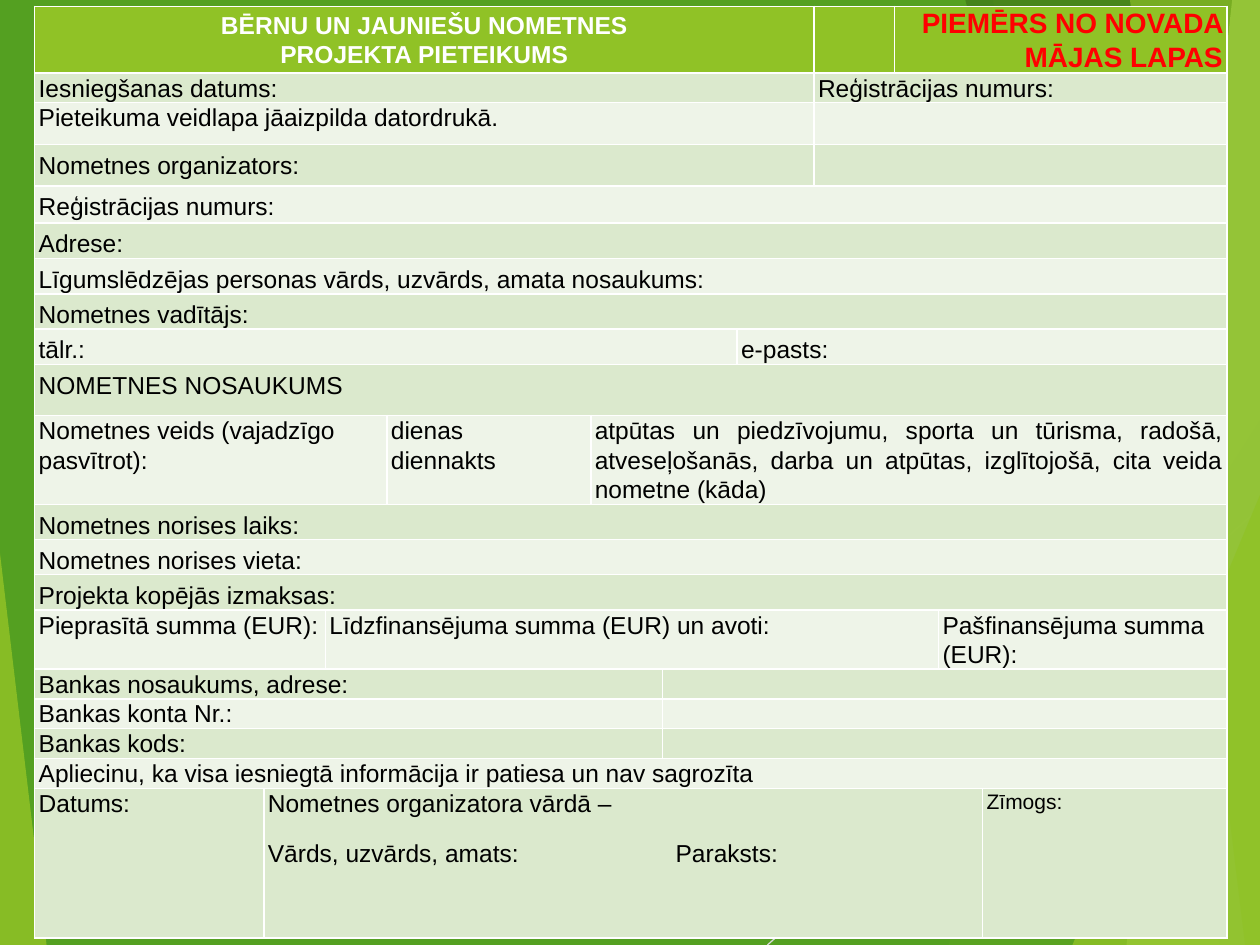
"""Build the camp project application form slide."""
from dataclasses import dataclass

from lxml import etree
from pptx import Presentation
from pptx import util as u
from pptx.dml.color import RGBColor
from pptx.enum import shapes, text
from pptx.oxml.ns import qn

GREEN = RGBColor(0x54, 0xA0, 0x21)
LIME = RGBColor(0x90, 0xC2, 0x26)
DARK_GREEN = RGBColor(0x3F, 0x78, 0x19)
PALE_LIME = RGBColor(0xC0, 0xE4, 0x74)
GREY = RGBColor(0xD9, 0xD9, 0xD9)
BAND_DARK = RGBColor(0xDB, 0xE9, 0xCD)
BAND_LIGHT = RGBColor(0xEE, 0xF4, 0xE8)
WHITE = RGBColor(0xFF, 0xFF, 0xFF)
BLACK = RGBColor(0, 0, 0)
RED = RGBColor(0xFF, 0, 0)

WIDTH, HEIGHT = 25.4, 19.05
FONT = "Arial"
COLUMNS = [4.62, 1.24, 1.24, 4.11, 1.45, 1.5, 1.55, 1.62, 0.89, 0.89, 4.92]
ROWS = [1.34, 0.58, 0.85, 0.83, 0.75, 0.72, 0.71, 0.71, 0.71, 1.03, 1.79,
        0.71, 0.71, 0.71, 1.19, 0.6, 0.59, 0.6, 0.6, 3.02]
TAB_STOP = 8.22
FIXED = u.Pt(20)
LEFT, RIGHT = text.PP_ALIGN.LEFT, text.PP_ALIGN.RIGHT
CENTER, JUSTIFY = text.PP_ALIGN.CENTER, text.PP_ALIGN.JUSTIFY


@dataclass
class Field:
    """One form field: its column span, lines and text format."""
    span: int
    lines: tuple = ()
    spacing: object = 1.07
    align: object = LEFT
    size: int = 14
    color: RGBColor = BLACK
    bold: bool = False
    gap: int = 0
    anchor: object = text.MSO_ANCHOR.TOP


def wide(label, span=11):
    """Return a field with fixed line spacing."""
    return Field(span, (label,), FIXED)


FORM = [
    [Field(7, ("BĒRNU UN JAUNIEŠU NOMETNES", "PROJEKTA PIETEIKUMS"), align=CENTER,
           color=WHITE, bold=True, anchor=text.MSO_ANCHOR.MIDDLE),
     Field(1),
     Field(3, ("PIEMĒRS NO NOVADA MĀJAS LAPAS",), align=RIGHT, size=16,
           color=RED, bold=True)],
    [Field(7, ("Iesniegšanas datums:",)), Field(4, ("Reģistrācijas numurs:",))],
    [Field(7, ("Pieteikuma veidlapa jāaizpilda datordrukā.",)), Field(4)],
    [wide("Nometnes organizators:", 7), Field(4)],
    [wide("Reģistrācijas numurs:")],
    [wide("Adrese:")],
    [wide("Līgumslēdzējas personas vārds, uzvārds, amata nosaukums:")],
    [wide("Nometnes vadītājs:")],
    [wide("tālr.:", 6), wide("e-pasts:", 5)],
    [wide("NOMETNES NOSAUKUMS")],
    [Field(3, ("Nometnes veids (vajadzīgo pasvītrot):",)),
     Field(1, ("dienas", "diennakts")),
     Field(7, ("atpūtas un piedzīvojumu, sporta un tūrisma, radošā, "
               "atveseļošanās, darba un atpūtas, izglītojošā, "
               "cita veida nometne (kāda)",), align=JUSTIFY)],
    [wide("Nometnes norises laiks:")],
    [wide("Nometnes norises vieta:")],
    [wide("Projekta kopējās izmaksas:")],
    [Field(2, ("Pieprasītā summa (EUR):",)),
     Field(7, ("Līdzfinansējuma summa (EUR) un avoti:",)),
     Field(2, ("Pašfinansējuma summa (EUR):",))],
    [Field(5, ("Bankas nosaukums, adrese:",)), Field(6)],
    [Field(5, ("Bankas konta Nr.:",)), Field(6)],
    [Field(5, ("Bankas kods:",)), Field(6)],
    [Field(11, ("Apliecinu, ka visa iesniegtā informācija ir patiesa un nav sagrozīta",))],
    [Field(1, ("Datums:",)),
     Field(9, ("Nometnes organizatora vārdā –", "Vārds, uzvārds, amats:\tParaksts:"), gap=12),
     Field(1, ("Zīmogs:",), size=12)],
]


def paint(shape, color, opacity=100):
    """Give a shape a plain fill with the opacity in percent."""
    shape.shadow.inherit = False
    shape.line.fill.background()
    shape.fill.solid()
    shape.fill.fore_color.rgb = color
    if opacity < 100:
        tint = shape.fill._xPr.find(".//" + qn("a:srgbClr"))
        etree.SubElement(tint, qn("a:alpha"), val=str(opacity * 1000))


def add_panel(slide, corners, color, opacity):
    """Add a translucent polygon with corners in centimetres."""
    points = [(u.Cm(x), u.Cm(y)) for x, y in corners]
    builder = slide.shapes.build_freeform(*points[0], scale=1.0)
    builder.add_line_segments(points[1:], close=True)
    paint(builder.convert_to_shape(), color, opacity)


def add_preset(slide, kind, left, top, width, color, opacity=100, apex=None):
    """Add a preset shape that reaches the foot of the slide."""
    shape = slide.shapes.add_shape(kind, u.Cm(left), u.Cm(top), u.Cm(width),
                                   u.Cm(HEIGHT - top))
    if apex is not None:
        shape.adjustments[0] = apex
    paint(shape, color, opacity)


def add_ray(slide, start, end):
    """Add a thin grey line."""
    ray = slide.shapes.add_connector(shapes.MSO_CONNECTOR.STRAIGHT,
                                     *(u.Cm(v) for v in start + end))
    ray.line.color.rgb = GREY
    ray.line.width = u.Pt(0.75)
    etree.SubElement(ray._element.spPr, qn("a:effectLst"))


def add_backdrop(slide):
    """Add the green facets behind the form."""
    triangle = shapes.MSO_SHAPE.ISOSCELES_TRIANGLE
    add_preset(slide, shapes.MSO_SHAPE.RECTANGLE, 0, 0, WIDTH, GREEN)
    add_ray(slide, (WIDTH, 10.24), (15.47, HEIGHT))

    def facet(top, foot, color, opacity):
        corners = [(top, 0), (WIDTH, 0), (WIDTH, HEIGHT), (foot, HEIGHT)]
        add_panel(slide, corners, color, opacity)

    facet(23.39, 19.13, LIME, 30)
    facet(20.02, 22.53, LIME, 20)
    add_preset(slide, triangle, 18.62, 8.46, 6.78, GREEN, 72, 1)
    facet(19.46, 24.59, DARK_GREEN, 70)
    facet(24.84, 22.71, PALE_LIME, 70)
    facet(22.78, 25.1, LIME, 65)
    add_preset(slide, triangle, 21.62, 9.98, 3.78, LIME, 80, 1)
    add_preset(slide, triangle, 0, 11.15, 0.94, LIME, 85, 0)


def add_line(paragraph, line, field, is_first):
    """Write one line of a field."""
    paragraph.alignment = field.align
    paragraph.line_spacing = field.spacing
    if not is_first and field.gap:
        paragraph.space_before = u.Pt(field.gap)
    if "\t" in line:
        tabs = etree.SubElement(paragraph._p.get_or_add_pPr(), qn("a:tabLst"))
        etree.SubElement(tabs, qn("a:tab"), pos=str(u.Cm(TAB_STOP)), algn="l")
    run = paragraph.add_run()
    run.text = line
    run.font.name = FONT
    run.font.size = u.Pt(field.size)
    run.font.bold = field.bold
    run.font.color.rgb = field.color


def fill_cell(cell, field, color):
    """Format a cell and write its field."""
    cell.fill.solid()
    cell.fill.fore_color.rgb = color
    cell.margin_left = cell.margin_right = u.Cm(0.08)
    cell.margin_top = cell.margin_bottom = 0
    cell.vertical_anchor = field.anchor
    frame = cell.text_frame
    if not field.lines:
        etree.SubElement(frame.paragraphs[0]._p, qn("a:endParaRPr"), sz="1400")
    for i, line in enumerate(field.lines):
        paragraph = frame.add_paragraph() if i else frame.paragraphs[0]
        add_line(paragraph, line, field, i == 0)


def add_form(slide):
    """Add the application form as a table."""
    form = slide.shapes.add_table(len(ROWS), len(COLUMNS), u.Cm(0.7), u.Cm(0.13),
                                  u.Cm(sum(COLUMNS)), u.Cm(sum(ROWS))).table
    for column, width in zip(form.columns, COLUMNS):
        column.width = u.Cm(width)
    for r, (height, fields) in enumerate(zip(ROWS, FORM)):
        form.rows[r].height = u.Cm(height)
        band = LIME if r == 0 else (BAND_LIGHT, BAND_DARK)[r % 2]
        start = 0
        for field in fields:
            cell = form.cell(r, start)
            if field.span > 1:
                cell.merge(form.cell(r, start + field.span - 1))
            fill_cell(cell, field, band)
            start += field.span


def main():
    """Build and save the slide."""
    deck = Presentation()
    deck.slide_width, deck.slide_height = u.Cm(WIDTH), u.Cm(HEIGHT)
    slide = deck.slides.add_slide(deck.slide_layouts[6])
    add_backdrop(slide)
    add_form(slide)
    deck.save("out.pptx")


if __name__ == "__main__":
    main()
